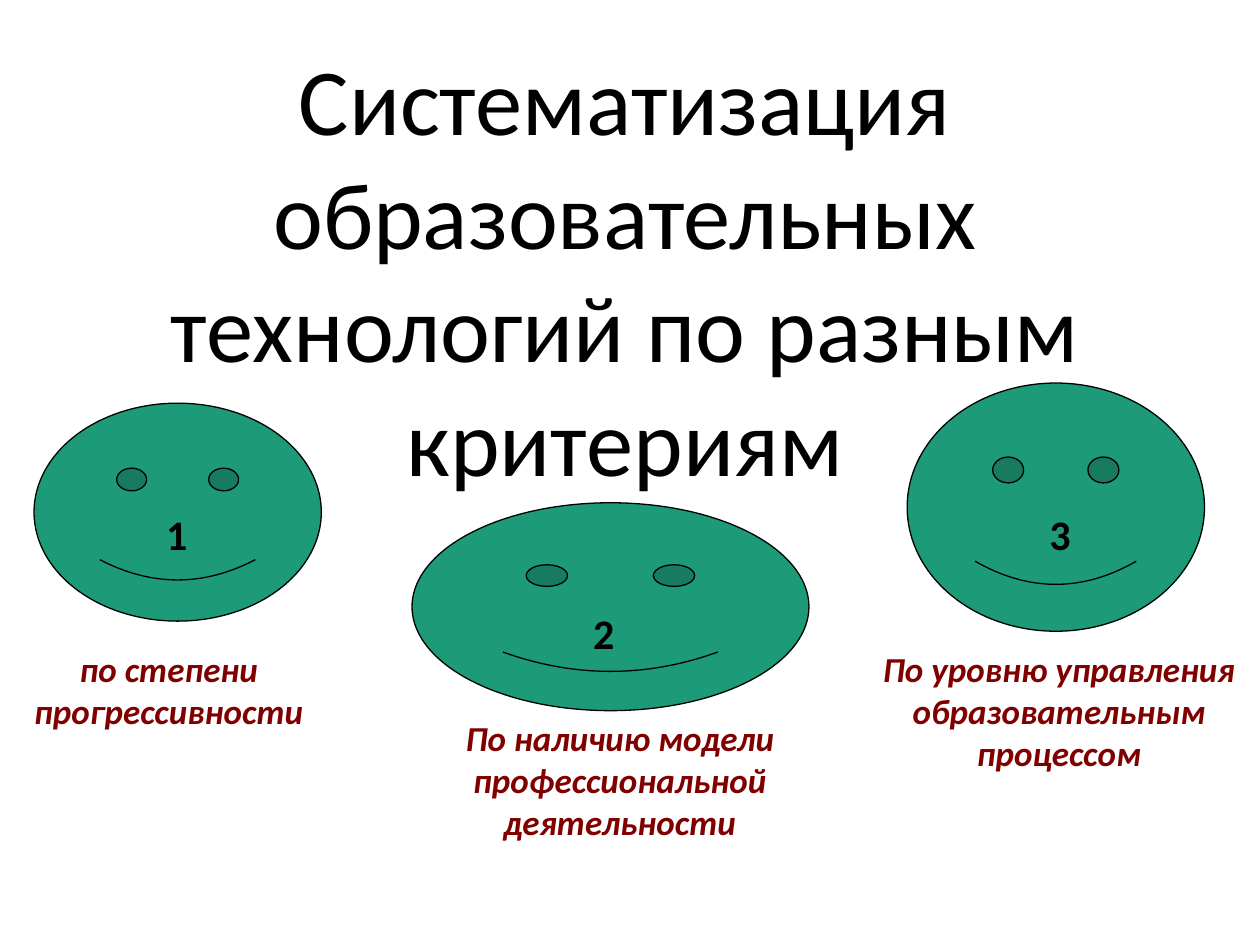
import pptx
import pptx.dml.color
import pptx.enum.shapes
import pptx.enum.text
import pptx.util
from pptx.util import Inches

COLORS = {"text": "000000", "caption": "800000", "face": "1D9A78", "outline": "000000"}
FONT = "Calibri"
TITLE = "Систематизация образовательных технологий по разным критериям"
FACES = [(0.27, 3.2, 2.28, 1.73), (3.27, 3.99, 3.15, 1.65), (7.2, 3.04, 2.36, 1.97)]
NUMBERS = [(1.22, 3.99, 0.47, 0.5), (4.61, 4.77, 0.63, 0.5), (8.23, 3.99, 0.32, 0.5)]
CAPTIONS = [
    ("по степени прогрессивности", (0, 5.09, 2.68, 0.77)),
    ("По наличию модели профессиональной деятельности", (3.11, 5.64, 3.62, 1.1)),
    ("По уровню управления образовательным процессом", (6.81, 5.09, 3.19, 1.43)),
]


def color(name):
    return pptx.dml.color.RGBColor.from_string(COLORS[name])


def add_text(page, text, place, size, tint="text", bold=False, italic=False, centered=True):
    box = page.shapes.add_textbox(*map(Inches, place))
    box.text_frame.word_wrap = True
    paragraph = box.text_frame.paragraphs[0]
    paragraph.text = text
    align = pptx.enum.text.PP_ALIGN
    paragraph.alignment = align.CENTER if centered else align.LEFT
    font = paragraph.font
    font.name = FONT
    font.size = pptx.util.Pt(size)
    font.bold = bold
    font.italic = italic
    font.color.rgb = color(tint)


def add_face(page, place):
    smiley = pptx.enum.shapes.MSO_SHAPE.SMILEY_FACE
    face = page.shapes.add_shape(smiley, *map(Inches, place))
    face.shadow.inherit = False
    face.fill.solid()
    face.fill.fore_color.rgb = color("face")
    face.line.color.rgb = color("outline")
    face.line.width = pptx.util.Pt(0.75)


def main():
    """Build the slide of three numbered smiling faces with captions."""
    deck = pptx.Presentation()
    deck.slide_width, deck.slide_height = Inches(10), Inches(7.5)
    page = deck.slides.add_slide(deck.slide_layouts[6])
    add_text(page, TITLE, (0.43, 0.28, 9.06, 3.7), 54)
    for place in FACES:
        add_face(page, place)
    for caption, place in CAPTIONS:
        add_text(page, caption, place, 20, "caption", bold=True, italic=True)
    for number, place in enumerate(NUMBERS, 1):
        add_text(page, str(number), place, 24, bold=True, centered=False)
    deck.save("out.pptx")


if __name__ == "__main__":
    main()
